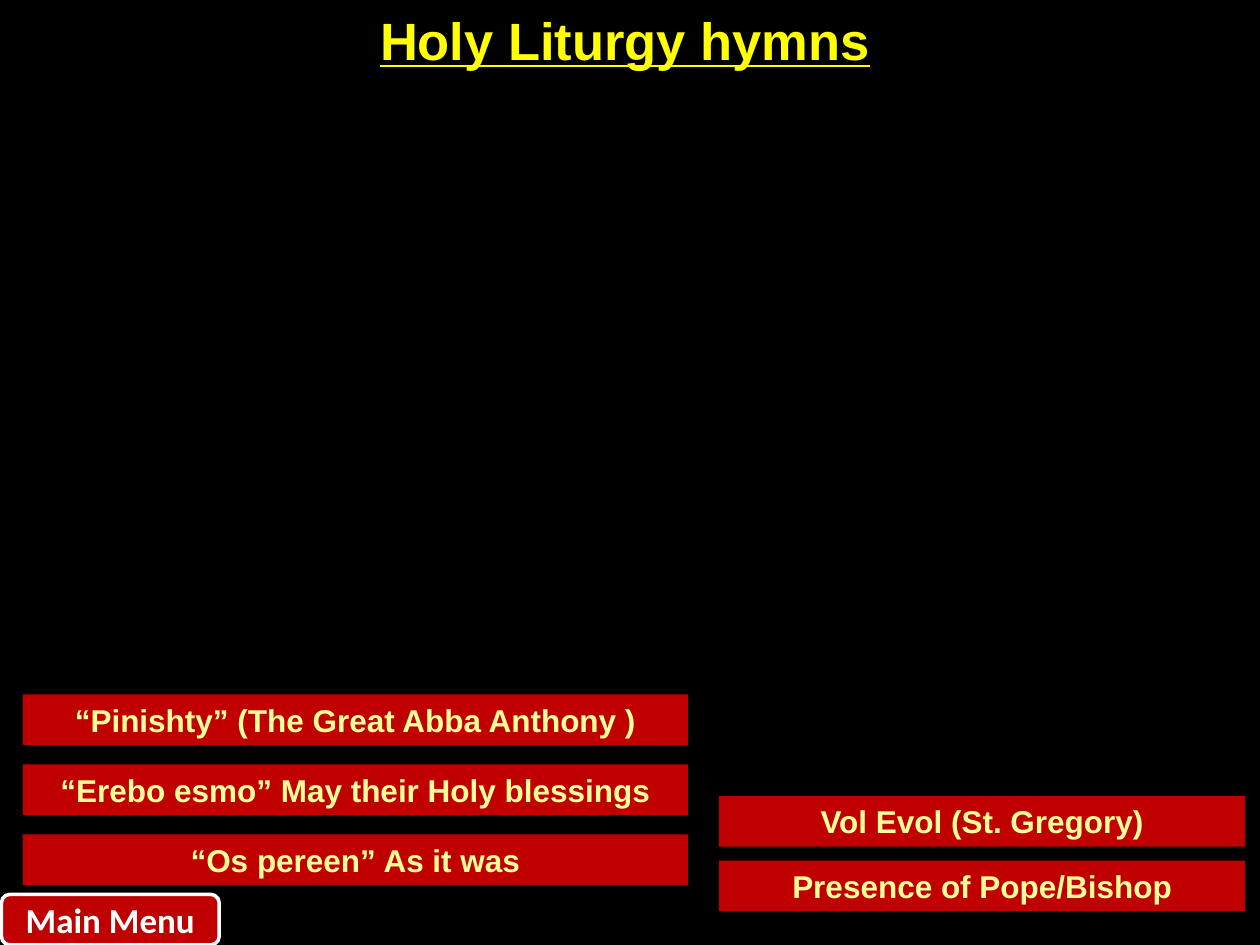
from lxml.etree import SubElement
from pptx import Presentation
from pptx.dml.color import RGBColor
from pptx.enum.shapes import MSO_SHAPE
from pptx.enum.text import MSO_ANCHOR, MSO_AUTO_SIZE, PP_ALIGN
from pptx.oxml.ns import qn
from pptx.util import Cm, Pt

RED, WHITE = "C00000", "FFFFFF"
TITLE = {"name": "Arial", "size": Pt(30), "bold": True, "underline": True}
HYMN = {"name": "Arial", "size": Pt(18), "bold": True}
MENU = {"name": "Calibri", "size": Pt(20), "bold": True}

# Columns of hymn bars: left, top, width, step, labels
COLUMNS = [
    (0.46, 14, 13.41, 1.41, ["“Pinishty” (The Great Abba Anthony )",
                             "“Erebo esmo” May their Holy blessings",
                             "“Os pereen” As it was"]),
    (14.5, 16.05, 10.6, 1.3, ["Vol Evol (St. Gregory)",
                              "Presence of Pope/Bishop"]),
]


def paint(color, shade):
    color.rgb = RGBColor.from_string(shade)


def write(frame, text, style, shade):
    para = frame.paragraphs[0]
    para.alignment = PP_ALIGN.CENTER
    run = para.add_run()
    run.text = text
    for key, value in style.items():
        setattr(run.font, key, value)
    paint(run.font.color, shade)


def add_title(slide, text):
    box = [Cm(n) for n in (0.89, 0.13, 23.42, 2.21)]
    table = slide.shapes.add_table(1, 1, *box).table
    table.first_row = table.horz_banding = False
    cell = table.cell(0, 0)
    # Hide the cell borders
    props = cell._tc.get_or_add_tcPr()
    for side in ("lnL", "lnR", "lnT", "lnB"):
        SubElement(SubElement(props, qn(f"a:{side}")), qn("a:noFill"))
    cell.fill.background()
    write(cell.text_frame, text, TITLE, "FFFF00")


def add_box(slide, kind, box, text, style, shade):
    shape = slide.shapes.add_shape(kind, *[Cm(n) for n in box])
    shape.shadow.inherit = False
    shape.fill.solid()
    paint(shape.fill.fore_color, RED)
    shape.line.fill.background()
    shape.text_frame.word_wrap = True
    write(shape.text_frame, text, style, shade)
    return shape


def add_bar(slide, left, top, width, text):
    bar = add_box(slide, MSO_SHAPE.RECTANGLE, (left, top, width, 1.02),
                  text, HYMN, "FFFF99")
    bar.text_frame.vertical_anchor = MSO_ANCHOR.TOP
    bar.text_frame.auto_size = MSO_AUTO_SIZE.SHAPE_TO_FIT_TEXT


def add_button(slide, text):
    button = add_box(slide, MSO_SHAPE.ROUNDED_RECTANGLE,
                     (0.03, 18.03, 4.39, 1.02), text, MENU, WHITE)
    button.text_frame.vertical_anchor = MSO_ANCHOR.MIDDLE
    button.line.width = Pt(2)
    button.line.fill.solid()
    paint(button.line.color, WHITE)


def main():
    deck = Presentation()
    deck.slide_width, deck.slide_height = Cm(25.4), Cm(19.05)
    slide = deck.slides.add_slide(deck.slide_layouts[6])
    slide.background.fill.solid()
    paint(slide.background.fill.fore_color, "000000")

    add_title(slide, "Holy Liturgy hymns")
    # Hymn bars, then the way back to the menu
    for left, top, width, step, labels in COLUMNS:
        for row, text in enumerate(labels):
            add_bar(slide, left, top + row * step, width, text)
    add_button(slide, "Main Menu")
    deck.save("out.pptx")


if __name__ == "__main__":
    main()
